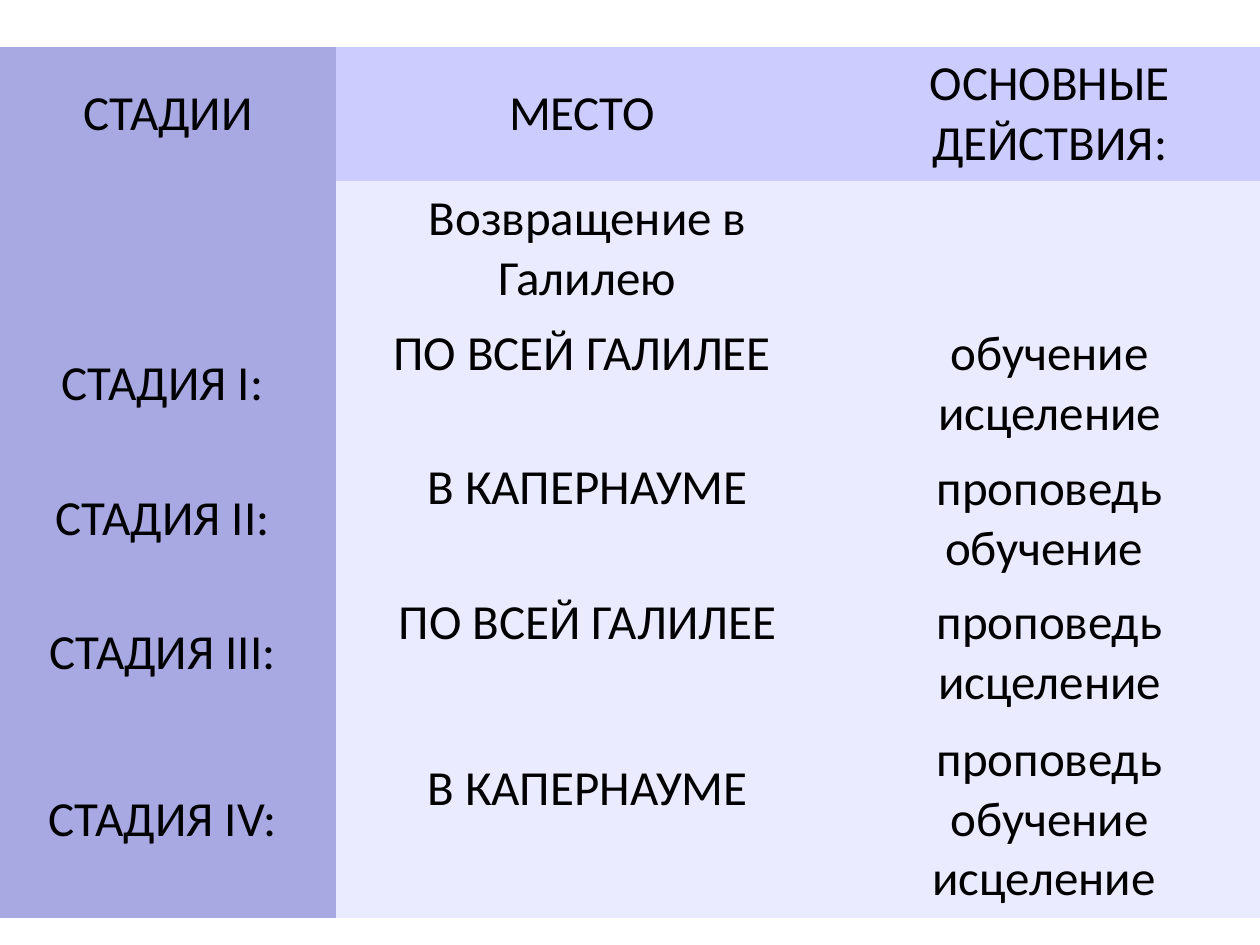
"""Build a slide with a table of ministry stages, places and main actions."""
from dataclasses import dataclass

from lxml.etree import SubElement
from pptx import Presentation
from pptx.dml.color import RGBColor
from pptx.enum.text import MSO_ANCHOR, PP_ALIGN
from pptx.oxml.ns import qn
from pptx.table import Table, _Cell
from pptx.util import Inches, Pt

WHITE = RGBColor(0xFF, 0xFF, 0xFF)
BLACK = RGBColor(0x00, 0x00, 0x00)
STAGE_VIOLET = RGBColor(0xA8, 0xA8, 0xE2)
HEADING_LILAC = RGBColor(0xCC, 0xCC, 0xFF)
BODY_LAVENDER = RGBColor(0xEB, 0xEB, 0xFF)

SLIDE_WIDTH, SLIDE_HEIGHT = Inches(10), Inches(7.5)
TABLE_TOP = Inches(0.14)
COLUMN_SHARES = (0.27, 0.4, 0.33)
COLUMN_SHARES = (0.2666, 0.3994, 0.334)
BAND_HEIGHT = 0.23
ROW_HEIGHT = 1.07
LAST_ROW_HEIGHT = 1.57
INSET = Inches(0.04)
TEXT_LINE = Inches(0.48)
PLAIN_TABLE_STYLE = "{2D5ABB26-0587-4C30-8999-92F81FD0307C}"


@dataclass(frozen=True)
class Stage:
    """One table row; a raised place sits one text line higher."""

    name: str
    place: str
    actions: str
    place_fill: RGBColor = BODY_LAVENDER
    raised: bool = True
    height: float = ROW_HEIGHT


STAGES = (
    Stage("СТАДИИ", "МЕСТО ", "ОСНОВНЫЕ ДЕЙСТВИЯ:", HEADING_LILAC, raised=False),
    Stage("", "Возвращение в Галилею", "", raised=False),
    Stage("СТАДИЯ I: ", "ПО ВСЕЙ ГАЛИЛЕЕ ", "обучение\nисцеление"),
    Stage("СТАДИЯ II: ", "В КАПЕРНАУМЕ", "проповедь\nобучение "),
    Stage("СТАДИЯ III: ", "ПО ВСЕЙ ГАЛИЛЕЕ", "проповедь\nисцеление"),
    Stage("СТАДИЯ IV: ", "В КАПЕРНАУМЕ", "проповедь\nобучение\nисцеление ",
          height=LAST_ROW_HEIGHT),
)


def fill_cell(cell: _Cell, text: str, color: RGBColor, raised: bool = False) -> None:
    """Colour a cell and write its lines centred, run by run."""
    cell.fill.solid()
    cell.fill.fore_color.rgb = color
    cell.vertical_anchor = MSO_ANCHOR.MIDDLE
    cell.margin_left = cell.margin_right = cell.margin_top = INSET
    cell.margin_bottom = INSET + TEXT_LINE if raised else INSET
    paragraph = cell.text_frame.paragraphs[0]
    paragraph.alignment = PP_ALIGN.CENTER
    if not text:
        SubElement(paragraph._p, qn("a:endParaRPr"), sz="800")
        return
    for index, line in enumerate(text.split("\n")):
        if index:
            paragraph.add_line_break()
        run = paragraph.add_run()
        run.text = line
        run.font.name = "Calibri"
        run.font.size = Pt(28)
        run.font.color.rgb = BLACK


def add_stage(table: Table, row: int, stage: Stage) -> None:
    """Write one stage into its table row."""
    table.rows[row].height = Inches(stage.height)
    fill_cell(table.cell(row, 0), stage.name, STAGE_VIOLET)
    fill_cell(table.cell(row, 1), stage.place, stage.place_fill, stage.raised)
    fill_cell(table.cell(row, 2), stage.actions, stage.place_fill)


def main() -> None:
    """Create the presentation and save it."""
    presentation = Presentation()
    presentation.slide_width, presentation.slide_height = SLIDE_WIDTH, SLIDE_HEIGHT
    slide = presentation.slides.add_slide(presentation.slide_layouts[6])
    table_height = Inches(BAND_HEIGHT + sum(stage.height for stage in STAGES))
    table = slide.shapes.add_table(
        len(STAGES) + 1, len(COLUMN_SHARES), 0, TABLE_TOP, SLIDE_WIDTH, table_height
    ).table
    table.first_row = table.horz_banding = False
    table._tbl.tblPr.find(qn("a:tableStyleId")).text = PLAIN_TABLE_STYLE
    for column, share in zip(table.columns, COLUMN_SHARES):
        column.width = int(SLIDE_WIDTH * share)
    table.rows[0].height = Inches(BAND_HEIGHT)
    for cell in table.rows[0].cells:
        fill_cell(cell, "", WHITE)
    table.cell(0, 0).merge(table.cell(0, len(COLUMN_SHARES) - 1))
    for row, stage in enumerate(STAGES, start=1):
        add_stage(table, row, stage)
    presentation.save("out.pptx")


if __name__ == "__main__":
    main()
